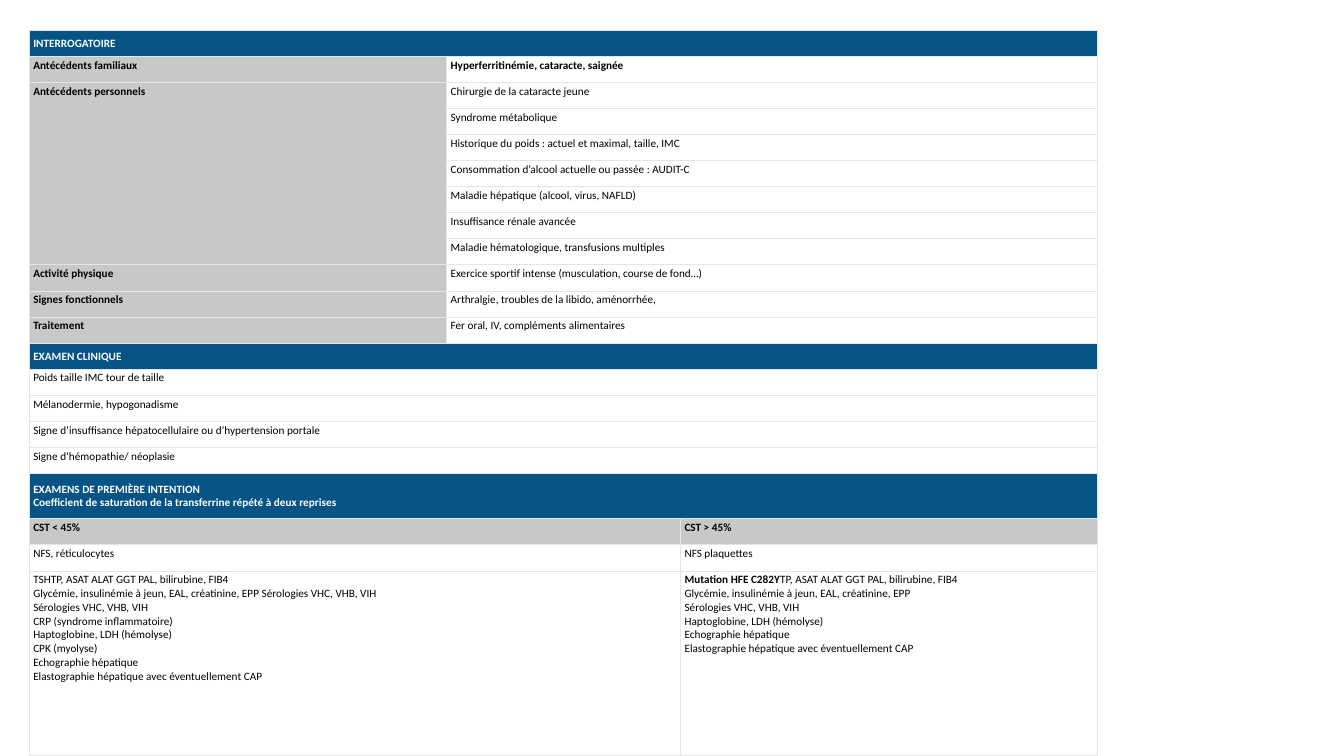
"""Build a one-slide medical work-up table: history, examination and first-line tests."""
import lxml.etree
import pptx
import pptx.dml.color
import pptx.enum.text
import pptx.oxml.ns
import pptx.util

THEME = {
    "font": "Calibri", "size": 8, "border_width": 0.75,
    "navy": "065485", "grey": "C7C8CA", "white": "FFFFFF", "black": "000000", "border": "E5E5E5",
}
WIDTH, HEIGHT = 13.33, 7.5
LEFT, TOP, TABLE_WIDTH, TABLE_HEIGHT = 0.29, 0.3, 10.61, 7.2
COLUMNS = [4.14, 2.32, 4.14]
TITLE_HEIGHT, TESTS_HEIGHT = 0.45, 1.83

HISTORY = [
    ("Antécédents familiaux", ["Hyperferritinémie, cataracte, saignée"]),
    ("Antécédents personnels", [
        "Chirurgie de la cataracte jeune",
        "Syndrome métabolique",
        "Historique du poids : actuel et maximal, taille, IMC",
        "Consommation d’alcool actuelle ou passée : AUDIT-C",
        "Maladie hépatique (alcool, virus, NAFLD)",
        "Insuffisance rénale avancée",
        "Maladie hématologique, transfusions multiples",
    ]),
    ("Activité physique", ["Exercice sportif intense (musculation, course de fond…)"]),
    ("Signes fonctionnels", ["Arthralgie, troubles de la libido, aménorrhée,"]),
    ("Traitement", ["Fer oral, IV, compléments alimentaires"]),
]
EXAMINATION = [
    "Poids taille IMC tour de taille",
    "Mélanodermie, hypogonadisme",
    "Signe d’insuffisance hépatocellulaire ou d’hypertension portale",
    "Signe d’hémopathie/ néoplasie",
]
LOW_TESTS = [
    "TSHTP, ASAT ALAT GGT PAL, bilirubine, FIB4",
    "Glycémie, insulinémie à jeun, EAL, créatinine, EPP Sérologies VHC, VHB, VIH",
    "Sérologies VHC, VHB, VIH",
    "CRP (syndrome inflammatoire)",
    "Haptoglobine, LDH (hémolyse)",
    "CPK (myolyse)",
    "Echographie hépatique",
    "Elastographie hépatique avec éventuellement CAP",
]
HIGH_TESTS = [
    "TP, ASAT ALAT GGT PAL, bilirubine, FIB4",
    "Glycémie, insulinémie à jeun, EAL, créatinine, EPP",
    "Sérologies VHC, VHB, VIH",
    "Haptoglobine, LDH (hémolyse)",
    "Echographie hépatique",
    "Elastographie hépatique avec éventuellement CAP",
]
TITLE = {"fill": "navy", "color": "white", "bold": True, "anchor": "MIDDLE"}
LABEL = {"fill": "grey", "bold": True}

deck = pptx.Presentation()
deck.slide_width = pptx.util.Inches(WIDTH)
deck.slide_height = pptx.util.Inches(HEIGHT)
page = deck.slides.add_slide(deck.slide_layouts[6])

row_count = 3 + sum(len(items) for _, items in HISTORY) + len(EXAMINATION) + 3
title_row, tests_row = row_count - 4, row_count - 1
row_height = (TABLE_HEIGHT - TITLE_HEIGHT - TESTS_HEIGHT) / (row_count - 2)
table = page.shapes.add_table(
    row_count, len(COLUMNS), *map(pptx.util.Inches, (LEFT, TOP, TABLE_WIDTH, TABLE_HEIGHT))
).table
table.first_row = table.horz_banding = False
for column, width in zip(table.columns, COLUMNS):
    column.width = pptx.util.Inches(width)
for index, row in enumerate(table.rows):
    height = {title_row: TITLE_HEIGHT, tests_row: TESTS_HEIGHT}.get(index, row_height)
    row.height = pptx.util.Inches(height)


def write(text, row, first, last, rows=1, lead="", fill="white", color="black", bold=False, anchor="TOP"):
    """Merge a block of cells and write its text; a newline starts a paragraph, a vertical tab breaks a line."""
    box = table.cell(row, first)
    if rows > 1 or last > first:
        box.merge(table.cell(row + rows - 1, last))
    box.vertical_anchor = pptx.enum.text.MSO_ANCHOR[anchor]
    box.margin_left = box.margin_right = pptx.util.Inches(0.04)
    box.margin_top = box.margin_bottom = pptx.util.Inches(0.02)
    box.fill.solid()
    box.fill.fore_color.rgb = pptx.dml.color.RGBColor.from_string(THEME[fill])
    for number, line in enumerate(text.split("\n")):
        para = box.text_frame.add_paragraph() if number else box.text_frame.paragraphs[0]
        pieces = [(piece, bold) for piece in line.split("\v")]
        if lead and number == 0:
            pieces.insert(0, (lead, True))
        for position, (piece, heavy) in enumerate(pieces):
            if position and not lead:
                para.add_line_break()
            span = para.add_run()
            span.text = piece
            span.font.name = THEME["font"]
            span.font.size = pptx.util.Pt(THEME["size"])
            span.font.bold = heavy
            span.font.color.rgb = pptx.dml.color.RGBColor.from_string(THEME[color])


write("INTERROGATOIRE", 0, 0, 2, **TITLE)
current = 1
for label, items in HISTORY:
    write(label, current, 0, 0, rows=len(items), **LABEL)
    for item in items:
        write(item, current, 1, 2, bold=label == "Antécédents familiaux")
        current += 1

write("EXAMEN CLINIQUE", current, 0, 2, **TITLE)
for offset, sign in enumerate(EXAMINATION, start=1):
    write(sign, current + offset, 0, 2)

write(
    "EXAMENS DE PREMIÈRE INTENTION\vCoefficient de saturation de la transferrine répété à deux reprises",
    title_row, 0, 2, **TITLE,
)
write("CST < 45%", title_row + 1, 0, 1, **LABEL)
write("CST > 45%", title_row + 1, 2, 2, **LABEL)
write("NFS, réticulocytes", title_row + 2, 0, 1)
write("NFS plaquettes", title_row + 2, 2, 2)
write("\n".join(LOW_TESTS), tests_row, 0, 1)
write("\n".join(HIGH_TESTS), tests_row, 2, 2, lead="Mutation HFE C282Y")

qn = pptx.oxml.ns.qn
for cell in table.iter_cells():
    properties = cell._tc.get_or_add_tcPr()
    for order, side in enumerate(("lnL", "lnR", "lnT", "lnB")):
        edge = lxml.etree.Element(qn(f"a:{side}"), w=str(pptx.util.Pt(THEME["border_width"])))
        paint = lxml.etree.SubElement(edge, qn("a:solidFill"))
        lxml.etree.SubElement(paint, qn("a:srgbClr"), val=THEME["border"])
        properties.insert(order, edge)

deck.save("out.pptx")
